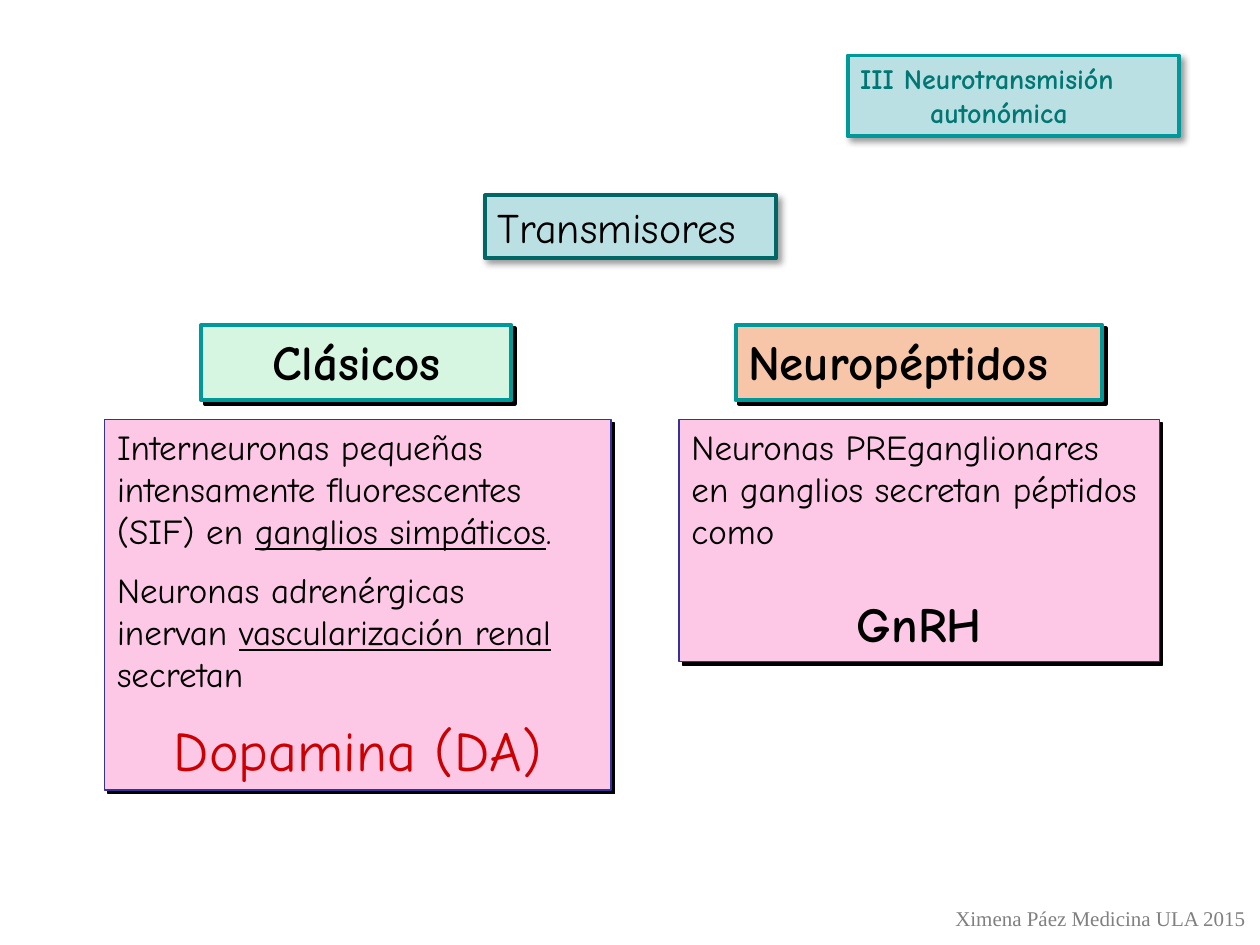
from lxml.etree import SubElement
from pptx import Presentation
from pptx.dml.color import RGBColor
from pptx.enum.shapes import MSO_SHAPE
from pptx.enum.text import MSO_ANCHOR, PP_ALIGN
from pptx.oxml.ns import qn
from pptx.util import Cm, Pt

BLACK = RGBColor(0, 0, 0)
RED = RGBColor(0xCC, 0, 0)
GRAY = RGBColor(0x80, 0x80, 0x80)
TEAL = RGBColor(0, 0x99, 0x99)
DARK = RGBColor(0, 0x66, 0x66)
INK = RGBColor(0, 0x77, 0x74)
NAVY = RGBColor(0x33, 0x33, 0x99)
AQUA = RGBColor(0xBB, 0xE0, 0xE3)
PINK = RGBColor(0xFD, 0xC7, 0xE6)
PEACH = RGBColor(0xF7, 0xC5, 0xA7)
MINT = RGBColor(0xD6, 0xF6, 0xE2)

FONT = "Comic Neue"
LEFT, MID = PP_ALIGN.LEFT, PP_ALIGN.CENTER
# Shadows: blur pt, distance pt, opacity %
SOFT, HARD = (4, 3, 40), (0, 2.8, 100)

# Paragraph: runs (text, underlined), then style that differs from the default
TITLE = [([("Transmisores", False)], dict(size=24))]
CLASSIC = [
    ([("Interneuronas pequeñas intensamente fluorescentes (SIF) en ", False),
      ("ganglios simpáticos", True), (".", False)], {}),
    ([("Neuronas adrenérgicas", False)], dict(gap=9.6)),
    ([("inervan ", False), ("vascularización renal", True)], {}),
    ([("secretan", False)], {}),
    ([("Dopamina (DA)", False)],
     dict(size=32, color=RED, align=MID, gap=12)),
]
PEPTIDE = [
    ([("Neuronas PREganglionares en ganglios secretan péptidos como", False)], {}),
    ([("GnRH", False)], dict(size=28, bold=True, align=MID, gap=24)),
]
HEAD = dict(size=28, bold=True)
TOPIC = dict(size=16, bold=True, color=INK)

# Box: left, top, width, height in cm, fill, line, line width, shadow, text
BOXES = [
    (9.78, 3.94, 5.87, 1.27, AQUA, DARK, 2.25, SOFT, TITLE),
    (2.11, 8.46, 10.21, 7.47, PINK, NAVY, 0.75, HARD, CLASSIC),
    (13.69, 8.46, 9.68, 4.88, PINK, NAVY, 0.75, HARD, PEPTIDE),
    (14.83, 6.55, 7.39, 1.52, PEACH, TEAL, 2.25, HARD,
     [([("Neuropéptidos", False)], HEAD)]),
    (4.06, 6.55, 6.25, 1.52, MINT, TEAL, 2.25, HARD,
     [([("Clásicos", False)], dict(HEAD, align=MID))]),
    (17.09, 1.12, 6.68, 1.63, AQUA, TEAL, 2.25, SOFT,
     [([("III Neurotransmisión", False)], TOPIC),
      ([("autonómica", False)], dict(TOPIC, indent=1.41))]),
]
CREDIT = [([("Ximena Páez Medicina ULA 2015", False)],
           dict(size=12, color=GRAY, align=MID, font="Times New Roman"))]


def write(frame, paras):
    frame.vertical_anchor = MSO_ANCHOR.TOP
    for i, (runs, style) in enumerate(paras):
        para = frame.add_paragraph() if i else frame.paragraphs[0]
        para.alignment = style.get("align", LEFT)
        para.space_before = Pt(style.get("gap", 0))
        font = para.font
        font.name = style.get("font", FONT)
        font.size = Pt(style.get("size", 20))
        font.bold = style.get("bold", False)
        font.color.rgb = style.get("color", BLACK)
        if "indent" in style:
            para._p.get_or_add_pPr().set("marL", str(Cm(style["indent"])))
        for text, under in runs:
            run = para.add_run()
            run.text = text
            if under:
                run.font.underline = True


def shade(shape, blur, dist, alpha):
    """Cast a black shadow down and to the right."""
    shape.shadow.inherit = False
    effects = shape._element.spPr.find(qn("a:effectLst"))
    outer = SubElement(effects, qn("a:outerShdw"), blurRad=str(Pt(blur)),
                       dist=str(Pt(dist)), dir="2700000",
                       algn="tl", rotWithShape="0")
    color = SubElement(outer, qn("a:srgbClr"), val=str(BLACK))
    SubElement(color, qn("a:alpha"), val=str(alpha * 1000))


deck = Presentation()
deck.slide_width, deck.slide_height = Cm(25.4), Cm(19.05)
slide = deck.slides.add_slide(deck.slide_layouts[6])

for *area, fill, line, width, shadow, paras in BOXES:
    box = slide.shapes.add_shape(MSO_SHAPE.RECTANGLE, *map(Cm, area))
    box.fill.solid()
    box.fill.fore_color.rgb = fill
    box.line.color.rgb = line
    box.line.width = Pt(width)
    shade(box, *shadow)
    box.text_frame.word_wrap = True
    write(box.text_frame, paras)

credit = slide.shapes.add_textbox(Cm(18.97), Cm(18.14), Cm(6.43), Cm(0.76))
credit.text_frame.word_wrap = False
write(credit.text_frame, CREDIT)

deck.save("out.pptx")
